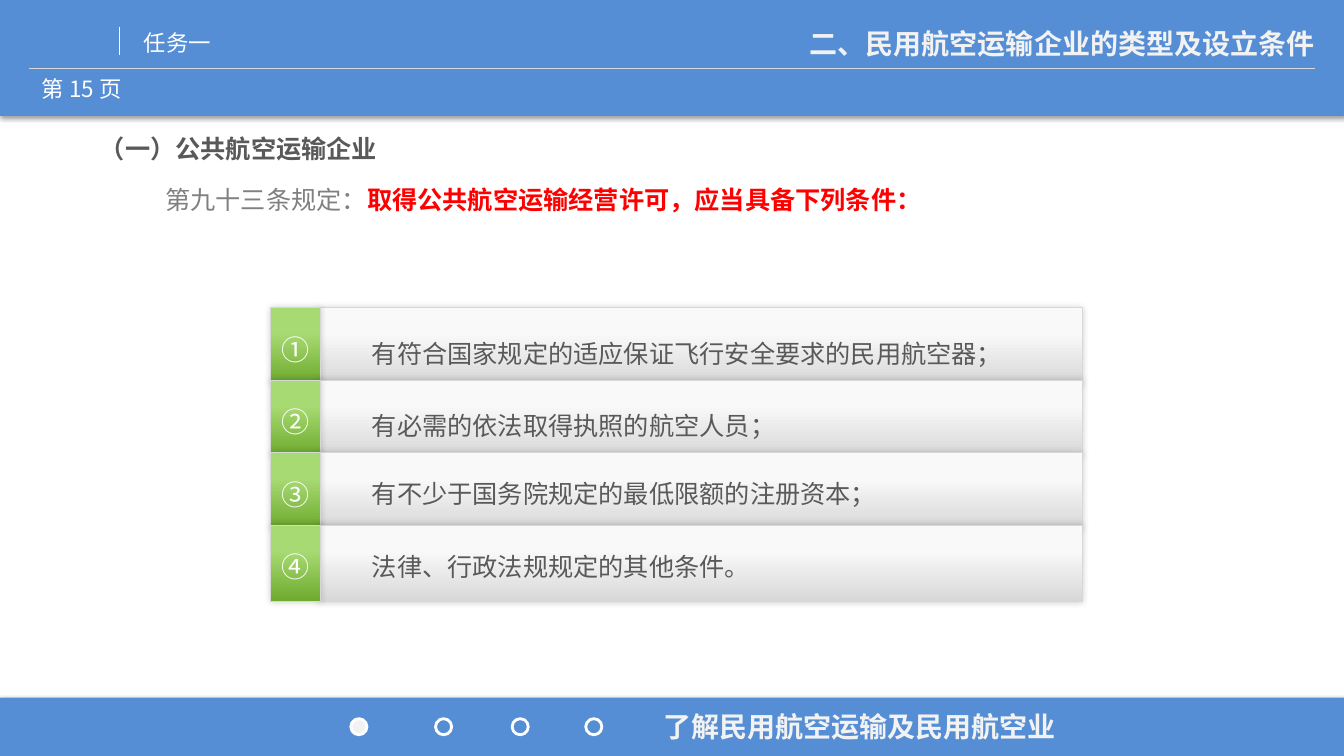
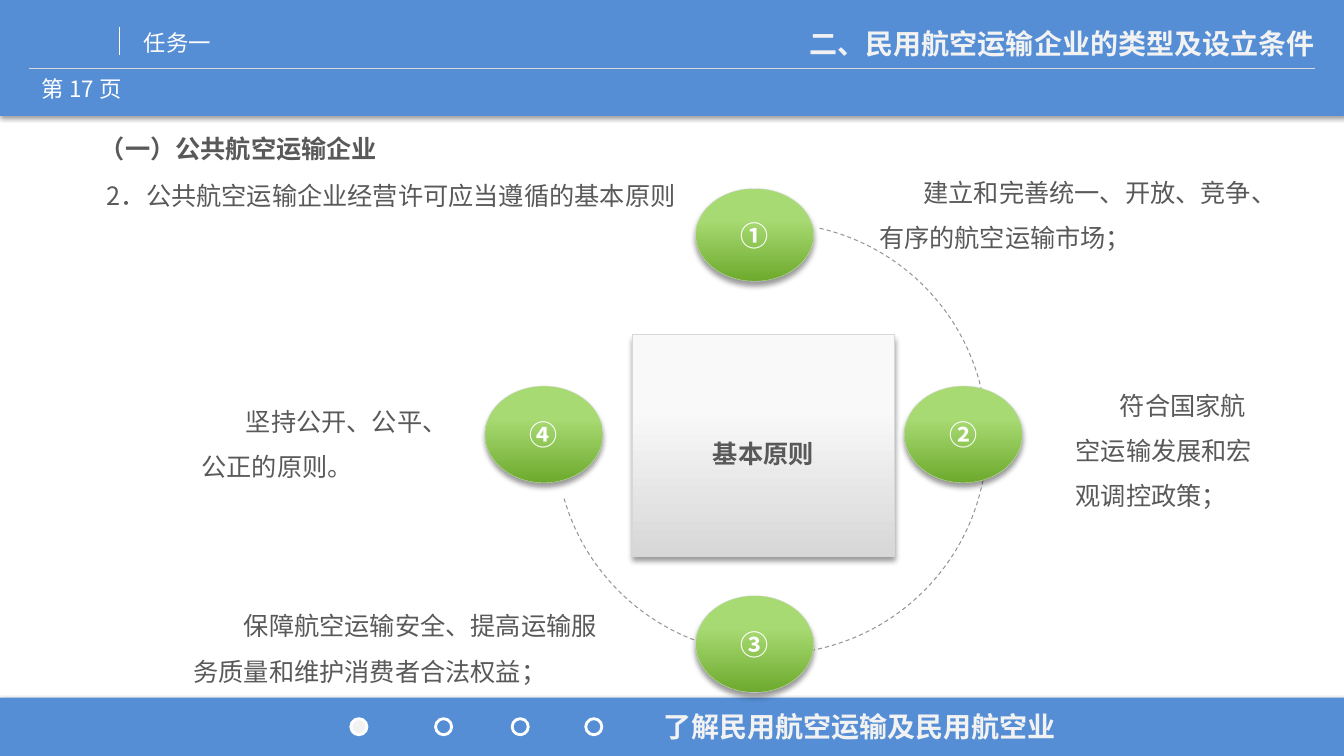
from dataclasses import dataclass

from lxml import etree
from pptx import Presentation
from pptx.dml.color import RGBColor
from pptx.enum.dml import MSO_LINE
from pptx.enum.shapes import MSO_CONNECTOR, MSO_SHAPE
from pptx.enum.text import MSO_ANCHOR, MSO_AUTO_SIZE, PP_ALIGN
from pptx.oxml.ns import qn
from pptx.util import Inches, Pt

RECT, OVAL, ARC = MSO_SHAPE.RECTANGLE, MSO_SHAPE.OVAL, MSO_SHAPE.ARC
LINE, DASH = MSO_CONNECTOR.STRAIGHT, MSO_LINE.DASH
TOP, MIDDLE = MSO_ANCHOR.TOP, MSO_ANCHOR.MIDDLE
LEFT, CENTER, RIGHT = PP_ALIGN.LEFT, PP_ALIGN.CENTER, PP_ALIGN.RIGHT
FIXED = MSO_AUTO_SIZE.NONE


@dataclass(frozen=True)
class Theme:
    font = "Noto Sans CJK SC"
    blue, white, pale, rule = "558ED5", "FFFFFF", "F2F2F2", "D9D9D9"
    edge, dash = "D7D7D7", "969696"
    silver, green = ("F9F9F9", "D7D7D7"), ("A8DA73", "6DAA2D")
    # Text styles: size, colour, bold
    title = (20, pale, True)
    label = (16, white, False)
    mark = (20, white, False)
    strong = (20, white, True)
    head = (18, "595959", True)
    body = (18, "595959", False)
    muted = (18, "808080", False)
    alert = (18, "FF0000", True)
    # Shadows: opacity in percent, blur, distance, angle
    band = (35, 3.1, 1.8, 90)
    glow = (20, 5, 0, 0)
    drop = (40, 4, 3, 90)


T = Theme()
WIDTH = 13.33
DOTS = (3.48, 4.32, 5.08, 5.81)
RULES = ((0.29, 0.68, 13.04, 0.68, T.rule), (1.19, 0.27, 1.19, 0.55, T.white))
ROWS = (
    ("①", "有符合国家规定的适应保证飞行安全要求的民用航空器；", 1.5),
    ("②", "有必需的依法取得执照的航空人员；", 1.5),
    ("③", "有不少于国务院规定的最低限额的注册资本；", 1.2),
    ("④", "法律、行政法规规定的其他条件。", 1.2),
)
NODES = (
    ("①", (6.9, 1.87, 1.17, 0.92)),
    ("②", (8.97, 3.83, 1.17, 0.96)),
    ("③", (6.9, 5.91, 1.17, 0.96)),
    ("④", (4.81, 3.83, 1.17, 0.96)),
)
NOTES = (
    ("建立和完善统一、开放、竞争、有序的航空运输市场；", (8.62, 1.56, 4.06, 1.01), 0.44),
    ("符合国家航空运输发展和宏观调控政策；", (10.57, 3.67, 2.03, 1.46), 0.44),
    ("保障航空运输安全、提高运输服务质量和维护消费者合法权益；", (1.82, 5.86, 4.3, 1.01), 0.5),
    ("坚持公开、公平、公正的原则。", (1.9, 3.83, 2.81, 1.01), 0.44),
)


def apply(target, values):
    for name, value in values.items():
        setattr(target, name, value)


def box(at):
    return [Inches(part) for part in at]


def place(shape, at):
    apply(shape, dict(zip(("left", "top", "width", "height"), box(at))))


def write(frame, lines, anchor=TOP):
    """Fill a frame; each line is (runs, format), each run (text, style)."""
    apply(frame, {"word_wrap": True, "auto_size": FIXED, "vertical_anchor": anchor})
    for index, (runs, form) in enumerate(lines):
        para = frame.add_paragraph() if index else frame.paragraphs[0]
        form = dict(form)
        props = para._p.get_or_add_pPr()
        props.set("marL", str(Inches(form.pop("inset", 0))))
        props.set("indent", str(Inches(form.pop("first", 0))))
        apply(para, {"alignment": LEFT, "space_before": Pt(0), **form})
        etree.SubElement(props, qn("a:buNone"))
        for text, (size, color, bold) in runs:
            run = para.add_run()
            run.text = text
            apply(run.font, {"name": T.font, "size": Pt(size), "bold": bold})
            run.font.color.rgb = RGBColor.from_string(color)
            east = etree.SubElement(run.font._element, qn("a:ea"))
            east.set("typeface", T.font)


def label(slide, at, text, style, **form):
    shape = slide.shapes.add_textbox(*box(at))
    write(shape.text_frame, [([(text, style)], form)])


def shade(shape, shadow):
    """Add an outer shadow in black."""
    alpha, blur, dist, angle = shadow
    effects = shape.element.spPr.find(qn("a:effectLst"))
    outer = etree.SubElement(effects, qn("a:outerShdw"), {
        "blurRad": str(Pt(blur)), "dist": str(Pt(dist)),
        "dir": str(angle * 60000), "algn": "ctr", "rotWithShape": "0"})
    color = etree.SubElement(outer, qn("a:srgbClr"), val="000000")
    etree.SubElement(color, qn("a:alpha"), val=str(alpha * 1000))


def stroke(line, color, width):
    line.color.rgb = RGBColor.from_string(color)
    line.width = Pt(width)


def draw(slide, kind, at, fill=None, line=None, shadow=None):
    """Add a preset shape; a pair of fill colours makes a gradient."""
    shape = slide.shapes.add_shape(kind, *box(at))
    shape.shadow.inherit = False
    if fill is None:
        shape.fill.background()
    elif isinstance(fill, tuple):
        shape.fill.gradient()
        shape.fill.gradient_angle = 270
        for stop, color, spot in zip(shape.fill.gradient_stops, fill, (0.33, 1)):
            stop.color.rgb = RGBColor.from_string(color)
            stop.position = spot
    else:
        shape.fill.solid()
        shape.fill.fore_color.rgb = RGBColor.from_string(fill)
    if line:
        stroke(shape.line, *line)
    else:
        shape.line.fill.background()
    if shadow:
        shade(shape, shadow)
    return shape


def panel(slide, kind, at, fill, shadow, text, style, **form):
    """Add a gradient shape with text in its middle."""
    shape = draw(slide, kind, at, fill, (T.edge, 0.25), shadow)
    write(shape.text_frame, [([(text, style)], form)], MIDDLE)


def rule(slide, start_x, start_y, end_x, end_y, color):
    line = slide.shapes.add_connector(LINE, *box((start_x, start_y, end_x, end_y)))
    stroke(line.line, color, 0.75)
    etree.SubElement(line.element.spPr, qn("a:effectLst"))


def dress(layout, slide):
    """Draw bands, rules and footer on a slide, then move them to its layout."""
    place(layout.placeholders[0], (7.76, 0.21, 5.38, 0.44))
    place(layout.placeholders[1], (0.89, 1.17, 11.32, 1.1))
    held = len(slide.shapes)
    for top, height in ((0, 1.15), (6.92, 0.58)):
        draw(slide, RECT, (0, top, WIDTH, height), T.blue, shadow=T.band)
    for ends in RULES:
        rule(slide, *ends)
    label(slide, (1.33, 0.24, 3.26, 0.37), "任务一", T.label)
    for index, left in enumerate(DOTS):
        fill = None if index else T.pale
        draw(slide, OVAL, (left, 7.13, 0.16, 0.16), fill, (T.white, 2))
    label(slide, (6.48, 6.99, 4.64, 0.44), "了解民用航空运输及民用航空业", T.title)
    for index, shape in enumerate(list(slide.shapes)[held:]):
        shape.element.xpath(".//p:cNvPr")[0].set("id", str(100 + index))
        layout.shapes.element.append(shape.element)


def start(slide, page, lead, **form):
    """Fill the title, page number, section heading and lead line."""
    write(slide.shapes.title.text_frame,
          [([("二、民用航空运输企业的类型及设立条件", T.title)], {"alignment": RIGHT})],
          MIDDLE)
    heading = ([("（一）公共航空运输企业", T.head)], {"line_spacing": 1.35})
    write(slide.placeholders[1].text_frame,
          [heading, (lead, {"space_before": Pt(4), **form})])
    label(slide, (0.21, 0.7, 1.2, 0.4), f"第 {page} 页", T.label, alignment=CENTER)


def terms(slide):
    """Stack the numbered conditions."""
    start(slide, 15, [("第九十三条规定：", T.muted),
                      ("取得公共航空运输经营许可，应当具备下列条件：", T.alert)],
          inset=0.65, line_spacing=1.5)
    for index, (mark, text, space) in enumerate(ROWS):
        top = 3.05 + 0.72 * index
        panel(slide, RECT, (3.15, top, 7.58, 0.76), T.silver, T.glow,
              text, T.body, first=0.44, line_spacing=space)
        panel(slide, RECT, (2.68, top, 0.5, 0.76), T.green, T.glow,
              mark, T.mark, alignment=CENTER, line_spacing=1.2)


def ring(slide):
    """Set the numbered principles round a centre."""
    start(slide, 17, [("2．公共航空运输企业经营许可应当遵循的基本原则", T.body)],
          inset=0.07, line_spacing=1.35)
    arc = draw(slide, ARC, (5.51, 2.21, 4.28, 4.28), line=(T.dash, 0.75))
    arc.line.dash_style = DASH
    arc.adjustments[0], arc.adjustments[1] = 169.77, 98.73
    panel(slide, RECT, (6.27, 3.32, 2.6, 2.2), T.silver, T.drop,
          "基本原则", T.head, alignment=CENTER, line_spacing=1.5)
    for mark, at in NODES:
        panel(slide, OVAL, at, T.green, T.drop, mark, T.strong, alignment=CENTER)
    for text, at, first in NOTES:
        label(slide, at, text, T.body, first=first, line_spacing=1.5)


def main():
    deck = Presentation()
    deck.slide_width, deck.slide_height = Inches(WIDTH), Inches(7.5)
    layout = deck.slide_layouts[1]
    slides = [deck.slides.add_slide(layout) for _ in range(2)]
    dress(layout, slides[0])
    for build, slide in zip((terms, ring), slides):
        build(slide)
    deck.save("out.pptx")


if __name__ == "__main__":
    main()
